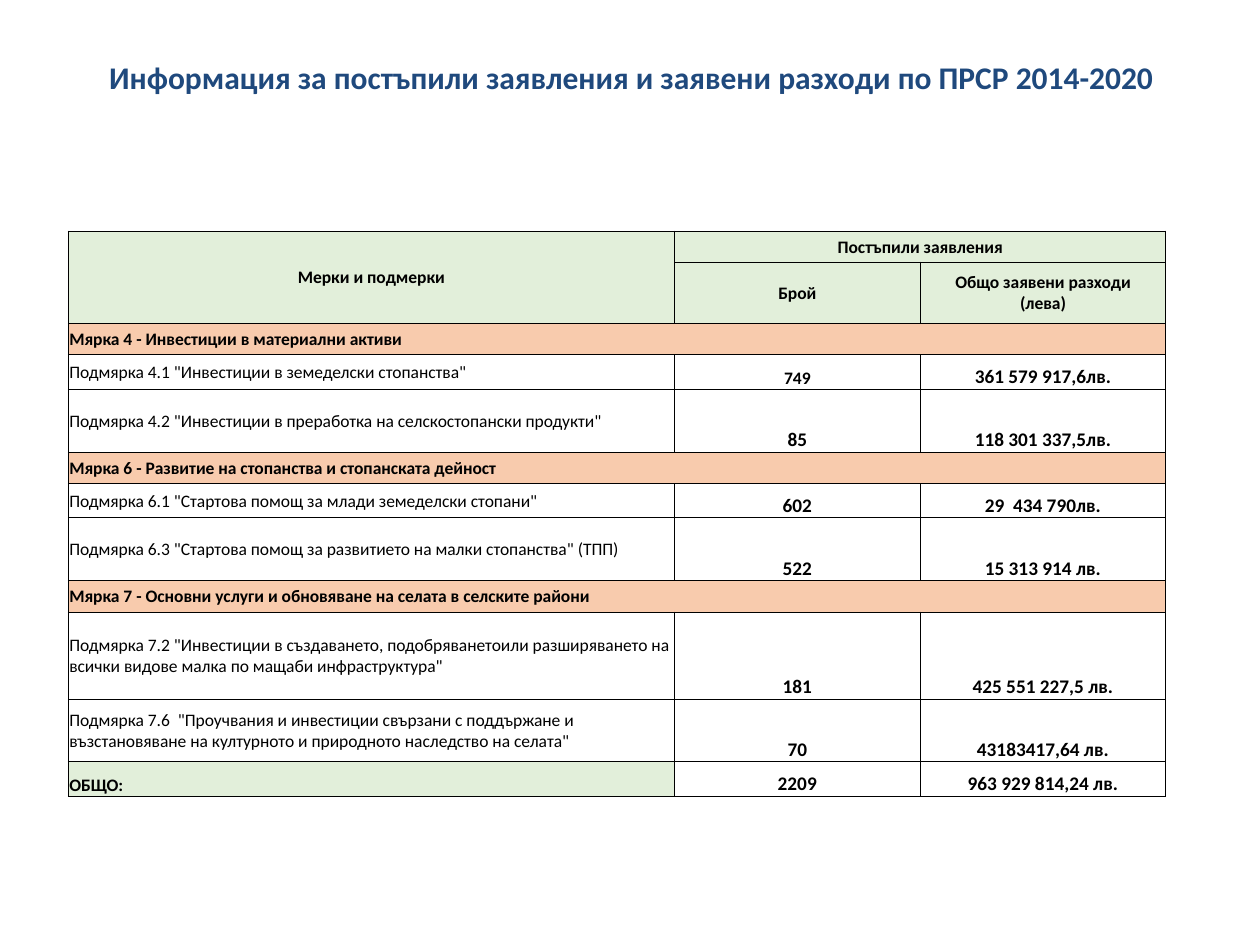
import dataclasses

import lxml.etree
import pptx
import pptx.dml.color
import pptx.enum.text
import pptx.oxml.ns
import pptx.util

Pt = pptx.util.Pt
RGB = pptx.dml.color.RGBColor
ALIGN = pptx.enum.text.PP_ALIGN
ANCHOR = pptx.enum.text.MSO_ANCHOR
qn = pptx.oxml.ns.qn


@dataclasses.dataclass(frozen=True)
class Theme:
    font: str = "Calibri"
    title: str = "1F497D"
    ink: str = "000000"
    header: str = "E2EFDA"
    measure: str = "F8CBAD"
    title_size: float = 18
    body_size: float = 10
    amount_size: float = 11
    border: float = 0.5


THEME = Theme()
TITLE = "Информация за постъпили заявления и заявени разходи по ПРСР 2014-2020 "
COL_WIDTHS = [346.4, 140.4, 140.4]
ROW_HEIGHTS = [17.8, 35, 18, 19.6, 36, 18, 19.6, 36, 18, 49.6, 36, 19.6]
HEADER_CELLS = [
    (0, 0, 1, 0, "Мерки и подмерки"),
    (0, 1, 0, 2, "Постъпили заявления"),
    (1, 1, 1, 1, "Брой"),
    (1, 2, 1, 2, "Общо заявени разходи\v(лева)"),
]
BODY = [
    ("Мярка 4 - Инвестиции в материални активи",),
    ('Подмярка 4.1 "Инвестиции в земеделски стопанства"', "749", "361 579 917,6лв."),
    ('Подмярка 4.2 "Инвестиции в преработка на селскостопански продукти"',
     "85", "118 301 337,5лв."),
    ("Мярка 6 - Развитие на стопанства и стопанската дейност",),
    ('Подмярка 6.1 "Стартова помощ за млади земеделски стопани"',
     "602", "29  434 790лв."),
    ('Подмярка 6.3 "Стартова помощ за развитието на малки стопанства" (ТПП)',
     "522", "15 313 914 лв."),
    ("Мярка 7 - Основни услуги и обновяване на селата в селските райони",),
    ('Подмярка 7.2 "Инвестиции в създаването, подобряванетоили разширяването на '
     'всички видове малка по мащаби инфраструктура"', "181", "425 551 227,5 лв."),
    ('Подмярка 7.6  "Проучвания и инвестиции свързани с поддържане и '
     'възстановяване на културното и природното наследство на селата"',
     "70", "43183417,64 лв."),
]
TOTAL = ("ОБЩО:", "2209", "963 929 814,24 лв.")


def set_attrs(obj, values):
    for name, value in values.items():
        setattr(obj, name, value)


def write(tf, text, size, color, bold=True, align=ALIGN.LEFT):
    p = tf.paragraphs[0]
    p.text = text
    p.alignment = align
    for r in p.runs:
        set_attrs(r.font, {"name": THEME.font, "size": Pt(size), "bold": bold})
        r.font.color.rgb = RGB.from_string(color)


def style_cell(cell):
    set_attrs(cell, {"margin_left": Pt(0.6), "margin_right": Pt(0.6),
                     "margin_top": Pt(0.6), "margin_bottom": 0,
                     "vertical_anchor": ANCHOR.MIDDLE})
    cell.fill.background()
    tc_pr = cell._tc.get_or_add_tcPr()
    for i, side in enumerate(("lnL", "lnR", "lnT", "lnB")):
        ln = lxml.etree.Element(qn(f"a:{side}"), w=str(Pt(THEME.border)))
        fill = lxml.etree.SubElement(ln, qn("a:solidFill"))
        lxml.etree.SubElement(fill, qn("a:srgbClr"), val=THEME.ink)
        tc_pr.insert(i, ln)


def fill_cell(cell, text, fill=None, size=THEME.body_size, anchor=ANCHOR.MIDDLE, **fmt):
    cell.vertical_anchor = anchor
    if fill:
        cell.fill.solid()
        cell.fill.fore_color.rgb = RGB.from_string(fill)
    write(cell.text_frame, text, size, THEME.ink, **fmt)


def add_title(s, left, top, width, height):
    sp = s.shapes.add_textbox(Pt(left), Pt(top), Pt(width), Pt(height))
    tf = sp.text_frame
    tf.word_wrap = True
    write(tf, TITLE, THEME.title_size, THEME.title, align=ALIGN.CENTER)


def fill_values(tbl, row, values):
    for col, value in enumerate(values, 1):
        size = THEME.body_size if value == "749" else THEME.amount_size
        fill_cell(tbl.cell(row, col), value, size=size,
                  anchor=ANCHOR.BOTTOM, align=ALIGN.CENTER)


def add_measures_table(s, left, top, width, height):
    tbl = s.shapes.add_table(len(ROW_HEIGHTS), len(COL_WIDTHS), Pt(left), Pt(top),
                             Pt(width), Pt(height)).table
    set_attrs(tbl, {"first_row": False, "horz_banding": False})
    for col, share in zip(tbl.columns, COL_WIDTHS):
        col.width = Pt(width * share / sum(COL_WIDTHS))
    for row, share in zip(tbl.rows, ROW_HEIGHTS):
        row.height = Pt(height * share / sum(ROW_HEIGHTS))
    for cell in tbl.iter_cells():
        style_cell(cell)

    for row, col, last_row, last_col, text in HEADER_CELLS:
        cell = tbl.cell(row, col)
        if (row, col) != (last_row, last_col):
            cell.merge(tbl.cell(last_row, last_col))
        fill_cell(cell, text, THEME.header, align=ALIGN.CENTER)

    for row, (name, *values) in enumerate(BODY, 2):
        cell = tbl.cell(row, 0)
        if values:
            fill_cell(cell, name, bold=False)
            fill_values(tbl, row, values)
        else:
            cell.merge(tbl.cell(row, 2))
            fill_cell(cell, name, THEME.measure)

    last = len(ROW_HEIGHTS) - 1
    fill_cell(tbl.cell(last, 0), TOTAL[0], THEME.header, anchor=ANCHOR.BOTTOM)
    fill_values(tbl, last, TOTAL[1:])


def main():
    prs = pptx.Presentation()
    set_attrs(prs, {"slide_width": Pt(720), "slide_height": Pt(540)})
    s = prs.slides.add_slide(prs.slide_layouts[6])
    add_title(s, 39, 29.5, 648, 29)
    add_measures_table(s, 39, 132, 627.2, 323.2)
    prs.save("out.pptx")


if __name__ == "__main__":
    main()
